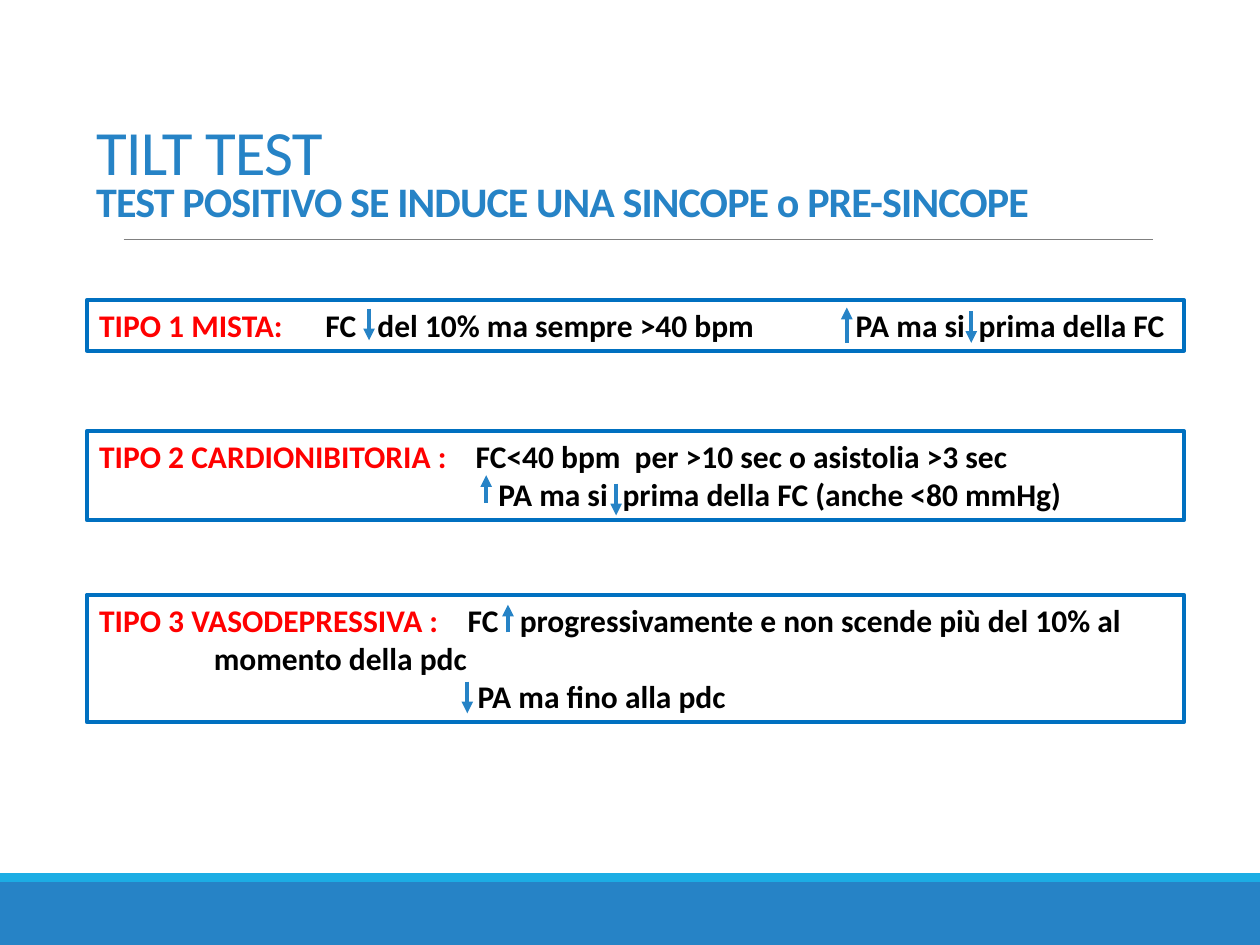
from lxml.etree import SubElement
from pptx import Presentation
from pptx.dml.color import RGBColor
from pptx.enum.shapes import MSO_CONNECTOR as Connector, MSO_SHAPE as Shape
from pptx.enum.text import MSO_ANCHOR as Anchor, MSO_AUTO_SIZE as AutoSize, PP_ALIGN as Align
from pptx.oxml.ns import qn
from pptx.util import Cm, Pt

BLUE, CYAN, BORDER, RED, BLACK, GREY = "2683C6", "1CADE4", "0070C0", "FF0000", "000000", "808080"
TITLE = [("TILT TEST", 36, False),
         ("TEST POSITIVO SE INDUCE UNA SINCOPE o PRE-SINCOPE", 24, True)]
BARS = [(17.78, 1.27, BLUE), (17.6, 0.18, CYAN)]
BOX_LEFT, BOX_WIDTH = 1.75, 22.12
TYPES = [
    {"top": 6.05, "height": 1.02, "label": "TIPO 1 MISTA:",
     "lines": [[(4.56, "FC"), (5.61, "del 10% ma sempre >40 bpm"),
                (15.25, "PA ma si"), (17.73, "prima della FC")]],
     "arrows": [(7.44, 6.22, 6.86), (19.58, 6.27, 6.91), (17.07, 6.91, 6.2)]},
    {"top": 8.69, "height": 1.8, "label": "TIPO 2 CARDIONIBITORIA :",
     "lines": [[(7.59, "FC<40 bpm  per >10 sec o asistolia >3 sec")],
               [(8.05, "PA ma si"), (10.55, "prima della FC (anche <80 mmHg)")]],
     "arrows": [(12.42, 9.75, 10.39), (9.8, 10.13, 9.58)]},
    {"top": 11.99, "height": 2.57, "label": "TIPO 3 VASODEPRESSIVA :",
     "lines": [[(7.43, "FC"), (8.48, "progressivamente e non scende più del 10% al")],
               [(2.31, "momento della pdc")],
               [(7.63, "PA ma fino alla pdc")]],
     "arrows": [(10.24, 12.75, 12.19), (9.42, 13.74, 14.38)]},
]


def paint(target, colour):
    """Give a font, fill or line format a solid colour."""
    fill = getattr(target, "fill", target)
    fill.solid()
    fill.fore_color.rgb = RGBColor.from_string(colour)


def add_span(para, text, size, bold, colour):
    """Append one formatted run to a paragraph."""
    span = para.add_run()
    span.text = text
    span.font.name, span.font.size, span.font.bold = "Calibri", Pt(size), bold
    paint(span.font, colour)
    return span


def add_box(page, left, top, width, height):
    """Add a rectangle without shadow."""
    box = page.shapes.add_shape(Shape.RECTANGLE, Cm(left), Cm(top), Cm(width), Cm(height))
    box.shadow.inherit = False
    return box


def add_line(page, start, end, colour, weight):
    """Add a straight line without shadow."""
    line = page.shapes.add_connector(Connector.STRAIGHT, *map(Cm, start + end))
    paint(line.line, colour)
    line.line.width = Pt(weight)
    SubElement(line.element.spPr, qn("a:effectLst"))
    return line


def add_arrow(page, x, start, end):
    """Add a vertical arrow pointing from start to end."""
    arrow = add_line(page, (x, start), (x, end), BLUE, 2.25)
    SubElement(arrow.line._get_or_add_ln(), qn("a:tailEnd"), type="triangle")


def set_tabs(para, stops):
    """Set left tab stops, in centimetres, on a paragraph."""
    tabs = SubElement(para._p.get_or_add_pPr(), qn("a:tabLst"))
    for stop in stops:
        SubElement(tabs, qn("a:tab"), pos=str(Cm(stop)), algn="l")


def add_title(page):
    """Fill and place the title placeholder."""
    title = page.shapes.title
    title.left, title.top, title.width, title.height = Cm(1.75), Cm(2.39), Cm(20.96), Cm(2.24)
    frame = title.text_frame
    frame.auto_size, frame.vertical_anchor = AutoSize.NONE, Anchor.BOTTOM
    frame.margin_left = frame.margin_right = Cm(0.19)
    frame.margin_top = frame.margin_bottom = Cm(0.1)
    para = frame.paragraphs[0]
    para.alignment, para.line_spacing = Align.LEFT, 0.75
    for index, (text, size, bold) in enumerate(TITLE):
        if index:
            para.add_line_break()
        span = add_span(para, text, size, bold, BLUE)
        span.font._element.set("spc", "-50")


def add_type(page, kind):
    """Add one framed syncope type with its arrows."""
    box = add_box(page, BOX_LEFT, kind["top"], BOX_WIDTH, kind["height"])
    box.fill.background()
    paint(box.line, BORDER)
    box.line.width = Pt(2.25)
    frame = box.text_frame
    frame.word_wrap, frame.vertical_anchor = True, Anchor.TOP
    for index, pieces in enumerate(kind["lines"]):
        para = frame.add_paragraph() if index else frame.paragraphs[0]
        para.alignment = Align.LEFT
        set_tabs(para, [stop for stop, _ in pieces])
        if not index:
            add_span(para, kind["label"], 18, True, RED)
        for _, text in pieces:
            add_span(para, "\t" + text, 18, True, BLACK)
    for arrow in kind["arrows"]:
        add_arrow(page, *arrow)


def main():
    """Build the slide and save it."""
    deck = Presentation()
    deck.slide_width, deck.slide_height = Cm(25.4), Cm(19.05)
    page = deck.slides.add_slide(deck.slide_layouts[5])
    for top, height, colour in BARS:
        bar = add_box(page, 0, top, 25.4, height)
        paint(bar, colour)
        bar.line.fill.background()
    add_line(page, (2.49, 4.83), (23.24, 4.83), GREY, 0.5)
    add_title(page)
    for kind in TYPES:
        add_type(page, kind)
    deck.save("out.pptx")


if __name__ == "__main__":
    main()
